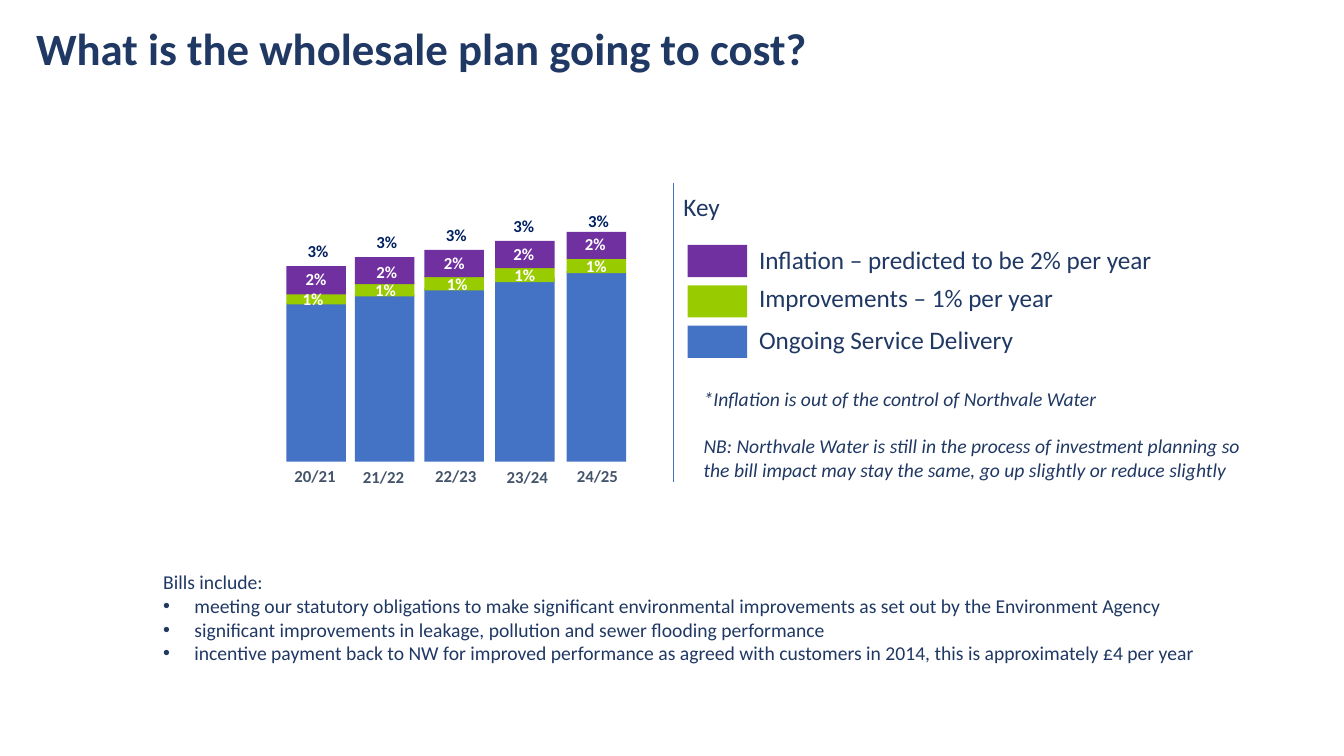
from lxml import etree
from pptx import Presentation
from pptx.dml.color import RGBColor
from pptx.enum import shapes, text
from pptx.oxml.ns import qn
from pptx.util import Inches, Pt

HUES = {"navy": "203864", "blue": "4472C4", "green": "99CC00", "purple": "7030A0",
        "slate": "44546A", "white": "FFFFFF", "deep": "002060"}
FONT = "Calibri"
TITLE = "What is the wholesale plan going to cost?"
YEARS = ["20/21", "21/22", "22/23", "23/24", "24/25"]
LEFTS = [2.84, 3.52, 4.21, 4.91, 5.62]
WIDE, BASE = 0.59, 4.58
STACKS = [
    ("blue", [3.01, 2.92, 2.86, 2.76, 2.69], [BASE] * 5),
    ("green", [2.91, 2.8, 2.74, 2.66, 2.57], [3.02, 2.94, 2.88, 2.8, 2.71]),
    ("purple", [2.64, 2.55, 2.48, 2.39, 2.3], [2.92, 2.82, 2.75, 2.66, 2.57]),
]
LABELS = [
    ("1%", "white", [2.74, 3.46, 4.17, 4.84, 5.55], [2.82, 2.73, 2.67, 2.58, 2.49]),
    ("2%", "white", [2.77, 3.47, 4.14, 4.83, 5.54], [2.62, 2.55, 2.46, 2.37, 2.27]),
    ("3%", "deep", [2.79, 3.47, 4.16, 4.83, 5.57], [2.34, 2.25, 2.18, 2.09, 2.04]),
]
YEAR_AT = [(2.81, 4.57, 0.63), (3.49, 4.58, 0.63), (4.2, 4.57, 0.64),
           (4.89, 4.58, 0.68), (5.6, 4.57, 0.65)]
KEY = [
    ("purple", "Inflation – predicted to be 2% per year", 2.37),
    ("green", "Improvements – 1% per year", 2.75),
    ("blue", "Ongoing Service Delivery", 3.17),
]
NOTES = [
    "*Inflation is out of the control of Northvale Water",
    "NB: Northvale Water is still in the process of investment planning so the "
    "bill impact may stay the same, go up slightly or reduce slightly",
]
BILLS = [
    "Bills include:",
    "meeting our statutory obligations to make significant environmental improvements "
    "as set out by the Environment Agency",
    "significant improvements in leakage, pollution and sewer flooding performance",
    "incentive payment back to NW for improved performance as agreed with customers "
    "in 2014, this is approximately £4 per year",
]

deck = Presentation()
deck.slide_width, deck.slide_height = Inches(13.33), Inches(7.5)
slide = deck.slides.add_slide(deck.slide_layouts[6])


def hue(name):
    return RGBColor.from_string(HUES[name])


def block(left, top, wide, high, color):
    box = slide.shapes.add_shape(shapes.MSO_SHAPE.RECTANGLE, Inches(left),
                                 Inches(top), Inches(wide), Inches(high))
    box.shadow.inherit = False
    box.fill.solid()
    box.fill.fore_color.rgb = hue(color)
    box.line.fill.background()


def write(lines, left, top, wide, high, size, color="navy", bold=False,
          slant=False, mid=False):
    frame = slide.shapes.add_textbox(Inches(left), Inches(top), Inches(wide),
                                     Inches(high)).text_frame
    frame.word_wrap = True
    frame.text = "\n".join(lines)
    for para in frame.paragraphs:
        font = para.font
        font.name, font.size, font.bold, font.italic = FONT, Pt(size), bold, slant
        font.color.rgb = hue(color)
        if mid:
            para.alignment = text.PP_ALIGN.CENTER
    return frame.paragraphs


def bullet(para):
    props = para._p.get_or_add_pPr()
    props.set("marL", str(Inches(0.31)))
    props.set("indent", str(Inches(-0.31)))
    face = etree.Element(qn("a:buFont"), typeface="Arial")
    mark = etree.Element(qn("a:buChar"), char="•")
    props.insert_element_before(face, "a:defRPr")
    props.insert_element_before(mark, "a:defRPr")


write([TITLE], 0.26, 0.16, 8.26, 0.64, 32, bold=True)

for color, tops, ends in STACKS:
    for left, top, end in zip(LEFTS, tops, ends):
        block(left, top, WIDE, end - top, color)
for year, (left, top, wide) in zip(YEARS, YEAR_AT):
    write([year], left, top, wide, 0.3, 12, "slate", bold=True, mid=True)
for label, color, lefts, tops in LABELS:
    for left, top in zip(lefts, tops):
        write([label], left, top, 0.73, 0.3, 12, color, bold=True, mid=True)

rule = slide.shapes.add_connector(shapes.MSO_CONNECTOR.STRAIGHT, Inches(6.68),
                                  Inches(1.82), Inches(6.68), Inches(4.78))
rule.line.color.rgb = hue("blue")
rule.line.width = Pt(0.5)
etree.SubElement(rule._element.spPr, qn("a:effectLst"))

write(["Key"], 6.68, 1.85, 1.32, 0.4, 18)
for row, (color, name, top) in enumerate(KEY):
    block(6.82, 2.43 + 0.4 * row, WIDE, 0.32, color)
    write([name], 7.43, top, 4.52, 0.4, 18)

notes = write(NOTES, 6.88, 3.79, 5.8, 1.04, 14, slant=True)
notes[1].space_before = Pt(17)
for para in write(BILLS, 1.52, 5.61, 11.8, 1.04, 14)[1:]:
    bullet(para)

deck.save("out.pptx")
